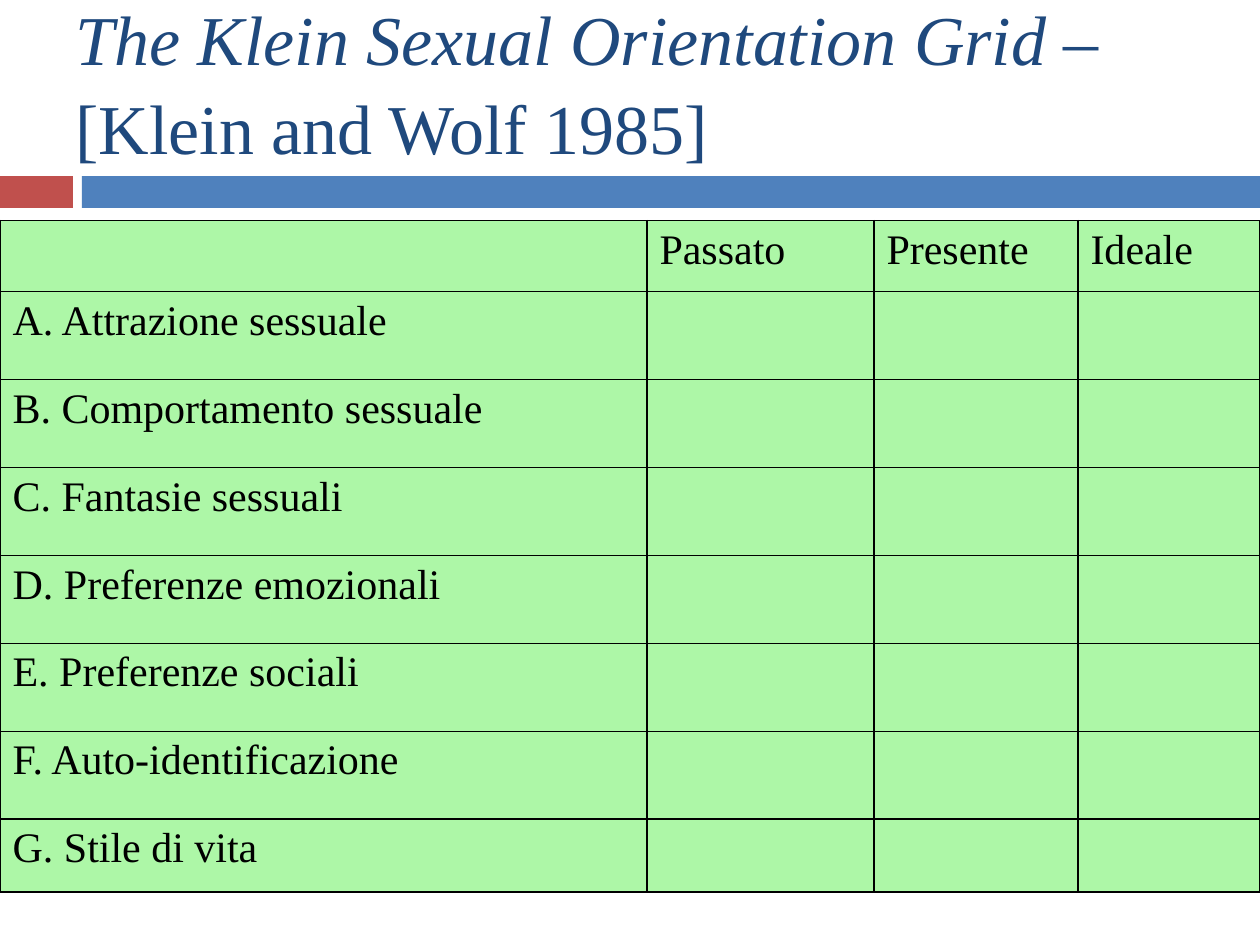
from dataclasses import dataclass

from lxml import etree
from pptx import Presentation
from pptx import util as u
from pptx.dml.color import RGBColor
from pptx.enum import shapes, text
from pptx.oxml import ns


@dataclass(frozen=True)
class Theme:
    font: str = "Times New Roman"
    title_size: int = 40
    table_size: int = 24
    title: str = "1F497D"
    accent: str = "C0504D"
    band: str = "4F81BD"
    cell: str = "ADF7A7"
    ink: str = "000000"


THEME = Theme()
PERIODS = ["Passato", "Presente", "Ideale"]
VARIABLES = [
    "A. Attrazione sessuale",
    "B. Comportamento sessuale",
    "C. Fantasie sessuali",
    "D. Preferenze emozionali",
    "E. Preferenze sociali",
    "F. Auto-identificazione",
    "G. Stile di vita",
]
COLUMN_WIDTHS = [647, 227, 204, 182]
ROW_HEIGHTS = [71] + [88] * 6 + [73]


def px(length):
    return u.Emu(round(length * u.Inches(1) / 126))


def apply_format(target, values):
    for name, value in values.items():
        setattr(target, name, value)


def format_font(font, size, color, italic=False):
    apply_format(font, {"name": THEME.font, "size": u.Pt(size), "italic": italic})
    font.color.rgb = RGBColor.from_string(color)


def place(shape, left, top, width, height):
    apply_format(shape, {"left": px(left), "top": px(top),
                         "width": px(width), "height": px(height)})


def add_title(slide):
    title = slide.shapes.title
    place(title, 63, 38, 1134, 157)
    frame = title.text_frame
    apply_format(frame, {
        "word_wrap": True,
        "auto_size": text.MSO_AUTO_SIZE.NONE,
        "vertical_anchor": text.MSO_ANCHOR.MIDDLE,
        "margin_top": px(6),
        "margin_bottom": px(79),
    })
    paragraph = frame.paragraphs[0]
    apply_format(paragraph, {"alignment": text.PP_ALIGN.LEFT, "line_spacing": 1.05})
    heading = paragraph.add_run()
    heading.text = "The Klein Sexual Orientation Grid –"
    paragraph.add_line_break()
    citation = paragraph.add_run()
    citation.text = "[Klein and Wolf 1985]"
    for run, italic in ((heading, True), (citation, False)):
        format_font(run.font, THEME.title_size, THEME.title, italic)


def add_bar(slide, left, width, color):
    bar = slide.shapes.add_shape(shapes.MSO_SHAPE.RECTANGLE,
                                 px(left), px(176), px(width), px(32))
    bar.shadow.inherit = False
    bar.fill.solid()
    bar.fill.fore_color.rgb = RGBColor.from_string(color)
    bar.line.fill.background()


def add_borders(cell):
    properties = cell._tc.get_or_add_tcPr()
    for position, side in enumerate(("lnL", "lnR", "lnT", "lnB")):
        line = etree.Element(ns.qn(f"a:{side}"), w=str(u.Pt(1)))
        fill = etree.SubElement(line, ns.qn("a:solidFill"))
        etree.SubElement(fill, ns.qn("a:srgbClr"), val=THEME.ink)
        properties.insert(position, line)


def fill_cell(cell, label):
    cell.fill.solid()
    cell.fill.fore_color.rgb = RGBColor.from_string(THEME.cell)
    add_borders(cell)
    cell.text = label
    format_font(cell.text_frame.paragraphs[0].font, THEME.table_size, THEME.ink)
    for run in cell.text_frame.paragraphs[0].runs:
        format_font(run.font, THEME.table_size, THEME.ink)


def add_grid(slide):
    rows = [["", *PERIODS]] + [[variable] + [""] * len(PERIODS) for variable in VARIABLES]
    table = slide.shapes.add_table(len(rows), len(COLUMN_WIDTHS), px(0), px(220.5),
                                   px(sum(COLUMN_WIDTHS)), px(sum(ROW_HEIGHTS))).table
    apply_format(table, {"first_row": False, "horz_banding": False})
    for column, width in zip(table.columns, COLUMN_WIDTHS):
        column.width = px(width)
    for row, height, labels in zip(table.rows, ROW_HEIGHTS, rows):
        row.height = px(height)
        for cell, label in zip(row.cells, labels):
            fill_cell(cell, label)


def main():
    presentation = Presentation()
    apply_format(presentation, {"slide_width": px(1260), "slide_height": px(945)})
    slide = presentation.slides.add_slide(presentation.slide_layouts[5])
    add_bar(slide, 0, 73, THEME.accent)
    add_bar(slide, 82, 1178, THEME.band)
    add_title(slide)
    add_grid(slide)
    presentation.save("out.pptx")


if __name__ == "__main__":
    main()
